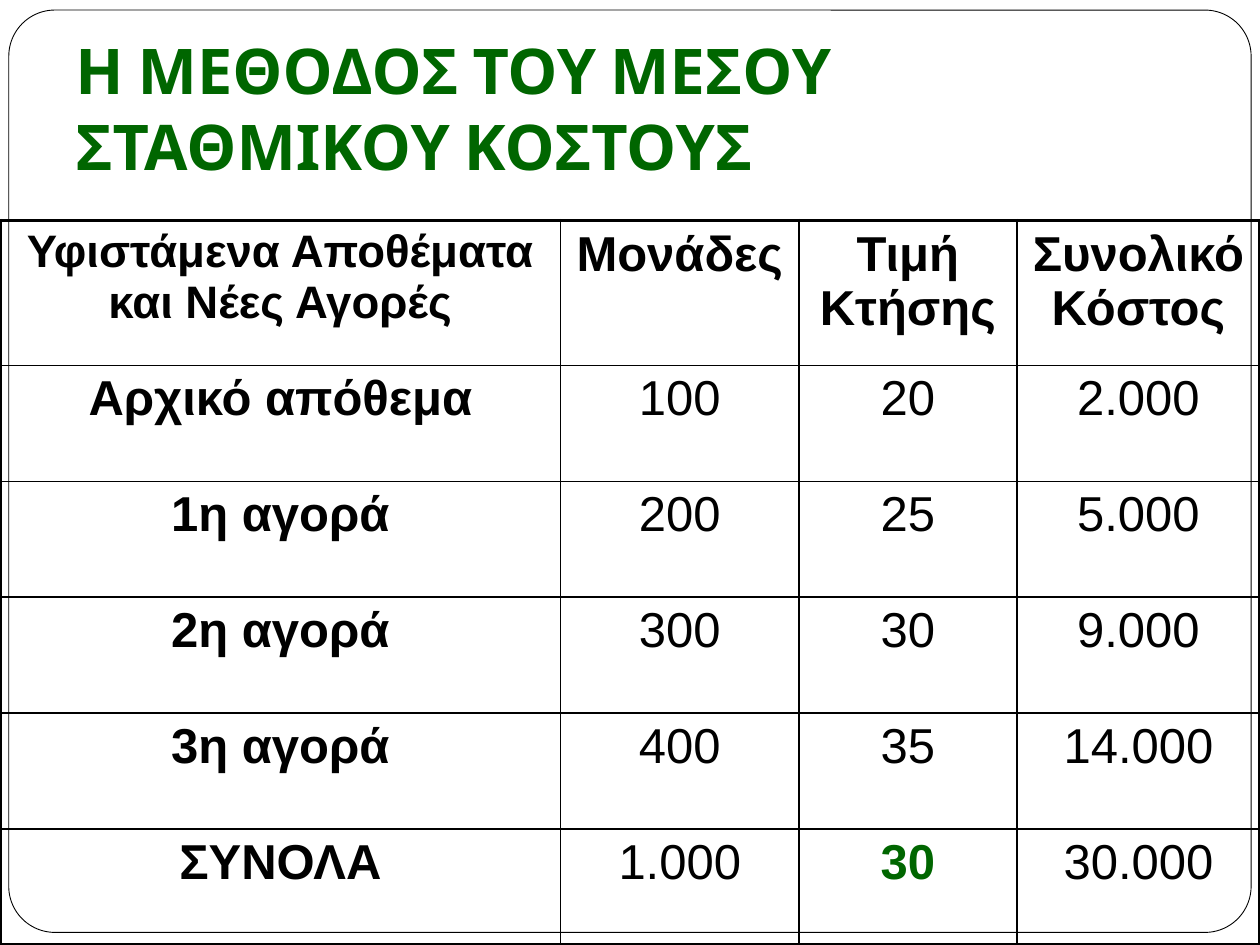
"""Build a slide with a table of the weighted average cost method."""
from dataclasses import dataclass

from lxml import etree
from pptx import Presentation
from pptx import util as u
from pptx.dml.color import RGBColor
from pptx.enum import shapes, text
from pptx.oxml import ns


@dataclass(frozen=True)
class Theme:
    ink: str = "000000"
    paper: str = "FFFFFF"
    accent: str = "006600"
    title_font: str = "Cabin"
    table_font: str = "Arial"
    title_size: int = 36
    table_size: int = 28
    long_header_size: int = 26
    frame_line: float = 0.5
    inner_line: float = 1
    outer_line: float = 2.25


class SlideBuilder:
    def __init__(self, slide, theme):
        self.slide = slide
        self.theme = theme

    def format_text(self, paragraph, font, size, color, bold):
        for run in paragraph.runs:
            run.font.name = font
            run.font.size = u.Pt(size)
            run.font.bold = bold
            run.font.color.rgb = RGBColor.from_string(color)

    def frame(self, left, top, width, height, corner):
        shape = self.slide.shapes.add_shape(
            shapes.MSO_SHAPE.ROUNDED_RECTANGLE,
            u.Inches(left), u.Inches(top), u.Inches(width), u.Inches(height))
        shape.adjustments[0] = corner
        shape.shadow.inherit = False
        shape.fill.solid()
        shape.fill.fore_color.rgb = RGBColor.from_string(self.theme.paper)
        shape.line.color.rgb = RGBColor.from_string(self.theme.ink)
        shape.line.width = u.Pt(self.theme.frame_line)

    def title(self, wording, left, top, width, height):
        shape = self.slide.shapes.add_textbox(
            u.Inches(left), u.Inches(top), u.Inches(width), u.Inches(height))
        text_frame = shape.text_frame
        text_frame.word_wrap = True
        text_frame.vertical_anchor = text.MSO_ANCHOR.BOTTOM
        text_frame.margin_bottom = u.Inches(0.1)
        text_frame.text = wording
        self.format_text(text_frame.paragraphs[0], self.theme.title_font,
                         self.theme.title_size, self.theme.accent, True)

    def borders(self, cell, outer_sides):
        properties = cell._tc.get_or_add_tcPr()
        for index, side in enumerate("LRTB"):
            points = self.theme.outer_line if side in outer_sides else self.theme.inner_line
            line = etree.Element(ns.qn(f"a:ln{side}"), w=str(int(u.Pt(points))))
            fill = etree.SubElement(line, ns.qn("a:solidFill"))
            etree.SubElement(fill, ns.qn("a:srgbClr"), val=self.theme.ink)
            properties.insert(index, line)

    def table(self, rows, left, top, widths, heights, highlight):
        table = self.slide.shapes.add_table(
            len(rows), len(widths), u.Inches(left), u.Inches(top),
            u.Inches(sum(widths)), u.Inches(sum(heights))).table
        for column, width in zip(table.columns, widths):
            column.width = u.Inches(width)
        for row, height in zip(table.rows, heights):
            row.height = u.Inches(height)
        last_row, last_column = len(rows) - 1, len(widths) - 1
        for r, values in enumerate(rows):
            for c, value in enumerate(values):
                cell = table.cell(r, c)
                cell.fill.background()
                cell.text_frame.text = value
                paragraph = cell.text_frame.paragraphs[0]
                paragraph.alignment = text.PP_ALIGN.CENTER
                marked = (r, c) == highlight
                self.format_text(
                    paragraph, self.theme.table_font,
                    self.theme.long_header_size if r == c == 0 else self.theme.table_size,
                    self.theme.accent if marked else self.theme.ink,
                    r == 0 or c == 0 or marked)
                edges = {"L": c == 0, "R": c == last_column, "T": r == 0, "B": r == last_row}
                self.borders(cell, [side for side, is_outer in edges.items() if is_outer])


def main():
    presentation = Presentation()
    presentation.slide_width = u.Inches(10)
    presentation.slide_height = u.Inches(7.5)
    slide = presentation.slides.add_slide(presentation.slide_layouts[6])
    builder = SlideBuilder(slide, Theme())
    builder.frame(0.07, 0.08, 9.86, 7.32, corner=0.05)
    builder.title("Η ΜΕΘΟΔΟΣ ΤΟΥ ΜΕΣΟΥ ΣΤΑΘΜΙΚΟΥ ΚΟΣΤΟΥΣ", 0.5, 0.3, 9, 1.25)
    inventory = [
        ("Υφιστάμενα Αποθέματα και Νέες Αγορές", "Μονάδες", "Τιμή Κτήσης", "Συνολικό Κόστος"),
        ("Αρχικό απόθεμα", "100", "20", "2.000"),
        ("1η αγορά", "200", "25", "5.000"),
        ("2η αγορά", "300", "30", "9.000"),
        ("3η αγορά", "400", "35", "14.000"),
        ("ΣΥΝΟΛΑ", "1.000", "30", "30.000"),
    ]
    builder.table(inventory, 0, 1.75, widths=[4.45, 1.89, 1.73, 1.93],
                  heights=[1.15] + [0.92] * 5, highlight=(5, 2))
    presentation.save("out.pptx")


if __name__ == "__main__":
    main()
